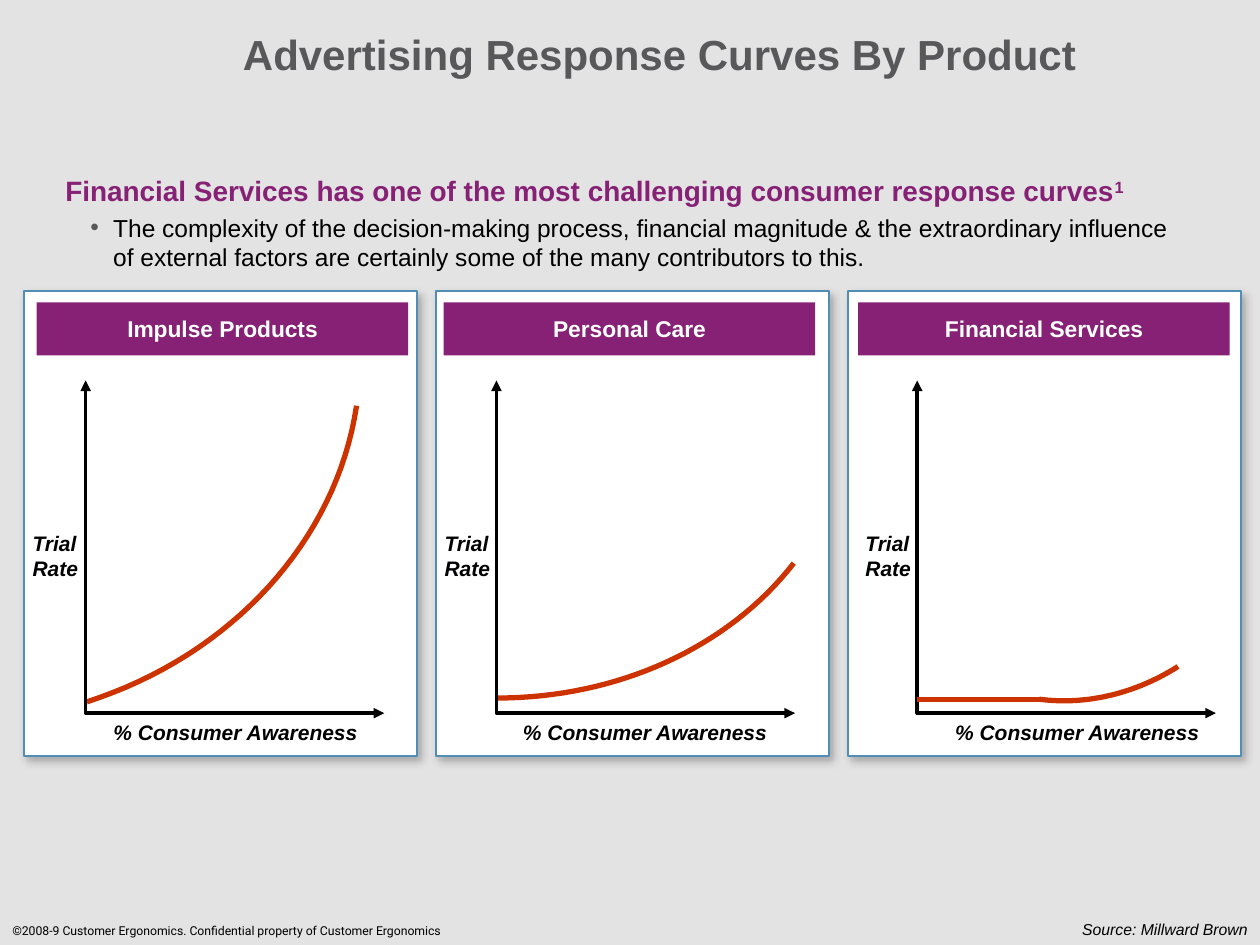
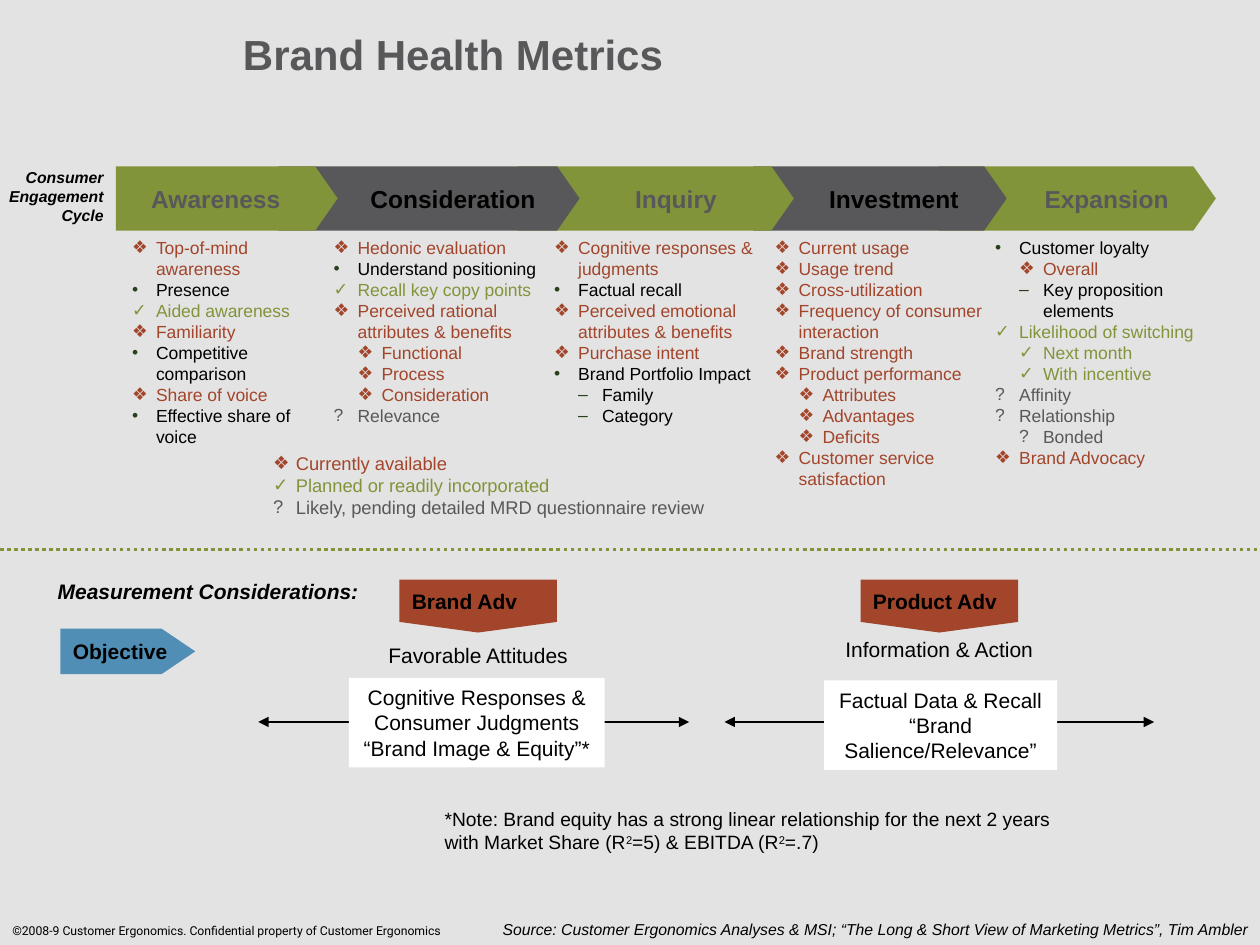
from dataclasses import dataclass
from typing import NamedTuple

from lxml.etree import SubElement
from pptx import Presentation
from pptx.dml.color import RGBColor
from pptx.enum.dml import MSO_LINE
from pptx.enum.shapes import MSO_CONNECTOR, MSO_SHAPE
from pptx.enum.text import MSO_ANCHOR, PP_ALIGN
from pptx.oxml.ns import qn
from pptx.util import Inches, Pt


@dataclass(frozen=True)
class Theme:
    font: str = "Arial"
    footer_font: str = "Roboto"
    background: str = "E3E3E3"
    black: str = "000000"
    white: str = "FFFFFF"
    gray: str = "58585A"
    purple: str = "862175"
    blue: str = "508EB5"
    green: str = "81943A"
    dark_green: str = "2A401A"
    rust: str = "A2452B"
    curve: str = "CC3300"
    title_size: float = 24
    heading_size: float = 16
    body_size: float = 14
    header_size: float = 13
    label_size: float = 12
    note_size: float = 11
    legend_size: float = 10.5
    metric_size: float = 10
    source_size: float = 9
    footer_size: float = 7


THEME = Theme()
AVAILABLE, PLANNED, LIKELY, OTHER, DETAIL = "❖", "✓", "?", "•", "–"
STATUS_COLORS = {  # text colour, bullet colour
    AVAILABLE: (THEME.rust, THEME.rust),
    PLANNED: (THEME.green, THEME.green),
    LIKELY: (THEME.gray, THEME.gray),
    OTHER: (THEME.black, THEME.dark_green),
    DETAIL: (THEME.black, THEME.dark_green),
}


class Metric(NamedTuple):
    status: str
    text: str
    level: int = 0


class Panel(NamedTuple):
    name: str
    header_left: float
    rate_left: float
    axis_left: float
    awareness_left: float
    curve: tuple


class Stage(NamedTuple):
    name: str
    left: float
    width: float
    text_left: float
    fill: str
    color: str
    column_left: float
    column_width: float
    metrics: tuple


PANELS = (
    Panel("Impulse Products", 0.29, 0.16, 0.68, 0.77,
          ((0.69, 5.57), (1.84, 5.2), (2.67, 4.29), (2.83, 3.22))),
    Panel("Personal Care", 3.52, 3.43, 3.94, 4.02,
          ((3.95, 5.54), (4.9, 5.54), (5.78, 5.14), (6.3, 4.47))),
    Panel("Financial Services", 6.81, 6.77, 7.28, 7.45,
          ((8.25, 5.55), (8.63, 5.6), (9.02, 5.5), (9.35, 5.29))),
)

STAGES = (
    Stage("Awareness", 0.92, 1.76, 1.2, THEME.green, THEME.gray, 0.95, 1.72, (
        Metric(AVAILABLE, "Top-of-mind awareness"),
        Metric(OTHER, "Presence"),
        Metric(PLANNED, "Aided awareness"),
        Metric(AVAILABLE, "Familiarity"),
        Metric(OTHER, "Competitive comparison"),
        Metric(AVAILABLE, "Share of voice"),
        Metric(OTHER, "Effective share of voice"))),
    Stage("Consideration", 2.21, 2.39, 2.94, THEME.gray, THEME.black, 2.55, 1.85, (
        Metric(AVAILABLE, "Hedonic evaluation"),
        Metric(OTHER, "Understand positioning"),
        Metric(PLANNED, "Recall key copy points"),
        Metric(AVAILABLE, "Perceived rational attributes & benefits"),
        Metric(AVAILABLE, "Functional", 1),
        Metric(AVAILABLE, "Process", 1),
        Metric(AVAILABLE, "Consideration", 1),
        Metric(LIKELY, "Relevance"))),
    Stage("Inquiry", 4.11, 2.19, 5.04, THEME.green, THEME.gray, 4.3, 1.85, (
        Metric(AVAILABLE, "Cognitive responses & judgments"),
        Metric(OTHER, "Factual recall"),
        Metric(AVAILABLE, "Perceived emotional attributes & benefits"),
        Metric(AVAILABLE, "Purchase intent"),
        Metric(OTHER, "Brand Portfolio Impact"),
        Metric(DETAIL, "Family", 1),
        Metric(DETAIL, "Category", 1))),
    Stage("Investment", 5.98, 2.01, 6.58, THEME.gray, THEME.black, 6.05, 1.85, (
        Metric(AVAILABLE, "Current usage"),
        Metric(AVAILABLE, "Usage trend"),
        Metric(AVAILABLE, "Cross-utilization"),
        Metric(AVAILABLE, "Frequency of consumer interaction"),
        Metric(AVAILABLE, "Brand strength"),
        Metric(AVAILABLE, "Product performance"),
        Metric(AVAILABLE, "Attributes", 1),
        Metric(AVAILABLE, "Advantages", 1),
        Metric(AVAILABLE, "Deficits", 1),
        Metric(AVAILABLE, "Customer service satisfaction"))),
    Stage("Expansion", 7.45, 2.2, 8.29, THEME.green, THEME.gray, 7.8, 1.85, (
        Metric(OTHER, "Customer loyalty"),
        Metric(AVAILABLE, "Overall", 1),
        Metric(DETAIL, "Key proposition elements", 1),
        Metric(PLANNED, "Likelihood of switching"),
        Metric(PLANNED, "Next month", 1),
        Metric(PLANNED, "With incentive", 1),
        Metric(LIKELY, "Affinity"),
        Metric(LIKELY, "Relationship"),
        Metric(LIKELY, "Bonded", 1),
        Metric(AVAILABLE, "Brand Advocacy"))),
)

LEGEND = (
    Metric(AVAILABLE, "Currently available"),
    Metric(PLANNED, "Planned or readily incorporated"),
    Metric(LIKELY, "Likely, pending detailed MRD questionnaire review"),
)


def bezier(start, control_1, control_2, end, steps=32):
    """Points along a cubic curve."""
    for step in range(steps + 1):
        t = step / steps
        weights = ((1 - t) ** 3, 3 * t * (1 - t) ** 2, 3 * t * t * (1 - t), t ** 3)
        yield tuple(sum(weight * point[axis] for weight, point
                        in zip(weights, (start, control_1, control_2, end)))
                    for axis in (0, 1))


class Deck:
    def __init__(self, theme):
        self.theme = theme
        self.presentation = Presentation()
        self.presentation.slide_width = Inches(10)
        self.presentation.slide_height = Inches(7.5)
        self.slide = None

    def start_slide(self, title, source):
        theme = self.theme
        self.slide = self.presentation.slides.add_slide(self.presentation.slide_layouts[6])
        fill = self.slide.background.fill
        fill.solid()
        fill.fore_color.rgb = RGBColor.from_string(theme.background)
        frame = self.text(1.83, 0, 8.17, 0.92, [title], theme.title_size, theme.gray,
                          bold=True, anchor=MSO_ANCHOR.MIDDLE)
        frame.paragraphs[0].line_spacing = 0.8
        self.text(0, 7.28, 3.9, 0.22,
                  ["©2008-9 Customer Ergonomics. Confidential property of Customer Ergonomics"],
                  theme.footer_size, font=theme.footer_font)
        self.text(3.73, 7.25, 6.27, 0.25, [source], theme.source_size, italic=True,
                  align=PP_ALIGN.RIGHT)

    def text(self, left, top, width, height, lines, size, color=None, **style):
        box = self.slide.shapes.add_textbox(*map(Inches, (left, top, width, height)))
        return self.fill_text(box, lines, size, color, **style)

    def fill_text(self, shape, lines, size, color=None, bold=False, italic=False,
                  align=PP_ALIGN.LEFT, anchor=MSO_ANCHOR.TOP, font=None,
                  left_inset=0.1, right_inset=0.1):
        frame = shape.text_frame
        frame.word_wrap = True
        frame.vertical_anchor = anchor
        frame.margin_left, frame.margin_right = Inches(left_inset), Inches(right_inset)
        for index, line in enumerate(lines):
            paragraph = frame.paragraphs[0] if index == 0 else frame.add_paragraph()
            paragraph.alignment = align
            self.fill_paragraph(paragraph, line, size, color, bold, italic, font)
        return frame

    def fill_paragraph(self, paragraph, line, size, color=None, bold=False, italic=False,
                       font=None):
        """Text between carets becomes superscript."""
        if "^" in line:
            for index, part in enumerate(line.split("^")):
                if part:
                    run = paragraph.add_run()
                    run.text = part
                    if index % 2:
                        run._r.get_or_add_rPr().set("baseline", "30000")
        else:
            paragraph.text = line
        paragraph.font.name = font or self.theme.font
        paragraph.font.size = Pt(size)
        paragraph.font.bold, paragraph.font.italic = bold, italic
        paragraph.font.color.rgb = RGBColor.from_string(color or self.theme.black)

    def bullet(self, paragraph, symbol, color, margin, hanging):
        properties = paragraph._p.get_or_add_pPr()
        properties.set("marL", str(Inches(margin)))
        properties.set("indent", str(-Inches(hanging)))
        bullet_color = SubElement(properties, qn("a:buClr"))
        SubElement(bullet_color, qn("a:srgbClr"), val=color)
        SubElement(properties, qn("a:buFont"), typeface=self.theme.font)
        SubElement(properties, qn("a:buChar"), char=symbol)

    def metrics(self, shape, metrics, size, indent=0.19):
        frame = shape.text_frame
        frame.word_wrap = True
        frame.vertical_anchor = MSO_ANCHOR.TOP
        for index, metric in enumerate(metrics):
            paragraph = frame.paragraphs[0] if index == 0 else frame.add_paragraph()
            paragraph.alignment = PP_ALIGN.LEFT
            color, bullet_color = STATUS_COLORS[metric.status]
            self.bullet(paragraph, metric.status, bullet_color,
                        indent * (metric.level + 1), indent)
            self.fill_paragraph(paragraph, metric.text, size, color)

    def shape(self, kind, left, top, width, height, fill, point=None):
        shape = self.slide.shapes.add_shape(kind, *map(Inches, (left, top, width, height)))
        shape.shadow.inherit = False
        shape.fill.solid()
        shape.fill.fore_color.rgb = RGBColor.from_string(fill)
        shape.line.fill.background()
        if point is not None:
            shape.adjustments[0] = point
        return shape

    def card(self, left, top, width, height):
        """White panel with a thin outline and a soft shadow."""
        card = self.shape(MSO_SHAPE.RECTANGLE, left, top, width, height, self.theme.white)
        self.outline(card, self.theme.blue, 1)
        effects = card._element.spPr.find(qn("a:effectLst"))
        shadow = SubElement(effects, qn("a:outerShdw"), blurRad=str(Pt(5)), dist=str(Pt(3)),
                            dir=str(55 * 60000), algn="tl", rotWithShape="0")
        shadow_color = SubElement(shadow, qn("a:srgbClr"), val=self.theme.black)
        SubElement(shadow_color, qn("a:alpha"), val="25000")

    def outline(self, shape, color, width, arrows=False):
        shape.line.color.rgb = RGBColor.from_string(color)
        shape.line.width = Pt(width)
        if arrows:
            for end in ("a:headEnd", "a:tailEnd"):
                SubElement(shape.line._get_or_add_ln(), qn(end), type="triangle")

    def polyline(self, points, color, width, arrows=False):
        start, *rest = [tuple(map(Inches, point)) for point in points]
        builder = self.slide.shapes.build_freeform(*start)
        builder.add_line_segments(rest, close=False)
        shape = builder.convert_to_shape()
        shape.shadow.inherit = False
        shape.fill.background()
        self.outline(shape, color, width, arrows)

    def horizontal(self, left, right, top, color, width, arrows=False):
        line = self.slide.shapes.add_connector(
            MSO_CONNECTOR.STRAIGHT, *map(Inches, (left, top, right, top)))
        self.outline(line, color, width, arrows)
        SubElement(line._element.spPr, qn("a:effectLst"))
        return line


def add_response_curves(deck):
    theme = deck.theme
    deck.start_slide("Advertising Response Curves By Product", "Source: Millward Brown")
    frame = deck.text(0.42, 1.33, 9.17, 0.95, [
        "Financial Services has one of the most challenging consumer response curves^1^"],
        theme.heading_size, theme.purple, bold=True)
    detail = frame.add_paragraph()
    deck.bullet(detail, OTHER, theme.gray, 0.38, 0.18)
    detail.space_before = Pt(3)
    deck.fill_paragraph(
        detail, "The complexity of the decision-making process, financial magnitude & the "
        "extraordinary influence of external factors are certainly some of the many "
        "contributors to this.", theme.body_size)

    axis_top, axis_bottom, axis_length = 3.02, 5.66, 2.37
    label = dict(bold=True, italic=True)
    for index, panel in enumerate(PANELS):
        deck.card(0.19 + 3.27 * index, 2.31, 3.12, 3.69)
        header = deck.shape(MSO_SHAPE.RECTANGLE, panel.header_left, 2.4, 2.95, 0.42,
                            theme.purple)
        deck.fill_text(header, [panel.name], theme.header_size, theme.white, bold=True,
                       align=PP_ALIGN.CENTER, anchor=MSO_ANCHOR.MIDDLE)
        deck.text(panel.rate_left, 4.16, 0.75, 0.5, ["Trial Rate"], theme.label_size, **label)
        deck.text(panel.awareness_left, axis_bottom, 2.2, 0.3, ["% Consumer Awareness"],
                  theme.label_size, align=PP_ALIGN.CENTER, left_inset=0, right_inset=0, **label)
        deck.polyline(bezier(*panel.curve), theme.curve, 3)
        deck.polyline([(panel.axis_left, axis_top), (panel.axis_left, axis_bottom),
                       (panel.axis_left + axis_length, axis_bottom)],
                      theme.black, 2, arrows=True)
    deck.horizontal(7.28, 8.25, 5.55, theme.curve, 3)


def add_brand_health(deck):
    theme = deck.theme
    deck.start_slide("Brand Health Metrics",
                     "Source: Customer Ergonomics Analyses & MSI; “The Long & Short View of "
                     "Marketing Metrics”, Tim Ambler")
    deck.text(0, 1.28, 0.92, 0.56, ["Consumer Engagement Cycle"], theme.source_size,
              bold=True, italic=True, align=PP_ALIGN.RIGHT, left_inset=0)
    for stage in reversed(STAGES):  # each stage overlaps the next one
        arrow = deck.shape(MSO_SHAPE.PENTAGON, stage.left, 1.32, stage.width, 0.51,
                           stage.fill, 0.35)
        deck.fill_text(arrow, [stage.name], theme.body_size, stage.color, bold=True,
                       anchor=MSO_ANCHOR.MIDDLE, left_inset=stage.text_left - stage.left,
                       right_inset=0)
    for stage in STAGES:
        column = deck.slide.shapes.add_textbox(
            *map(Inches, (stage.column_left, 1.83, stage.column_width, 2.3)))
        deck.metrics(column, stage.metrics, theme.metric_size)
    legend = deck.shape(MSO_SHAPE.RECTANGLE, 2.07, 3.54, 3.72, 0.63, theme.background)
    deck.metrics(legend, LEGEND, theme.legend_size, 0.18)

    divider = deck.horizontal(0, 10, 4.36, theme.green, 2)
    divider.line.dash_style = MSO_LINE.ROUND_DOT
    deck.text(0.36, 4.54, 3.17, 0.3, ["Measurement Considerations:"], theme.label_size,
              bold=True, italic=True)
    objective = deck.shape(MSO_SHAPE.PENTAGON, 0.48, 4.99, 1.07, 0.36, theme.blue, 0.74)
    deck.fill_text(objective, ["Objective"], theme.label_size, bold=True,
                   anchor=MSO_ANCHOR.MIDDLE, right_inset=0)

    for name, left, goal, goal_box, arrow, measure, measure_box in (
        ("Brand Adv", 3.17, "Favorable Attitudes", (2.82, 5.05), (2.05, 5.47),
         ["Cognitive Responses &\vConsumer Judgments", "“Brand Image & Equity”*"],
         (2.77, 5.38, 2.03, 0.71)),
        ("Product Adv", 6.83, "Information & Action", (6.48, 5), (5.75, 9.16),
         ["Factual Data & Recall", "“Brand Salience/Relevance”"],
         (6.54, 5.4, 1.85, 0.71)),
    ):
        tag = deck.shape(MSO_SHAPE.FLOWCHART_OFFPAGE_CONNECTOR, left, 4.6, 1.25, 0.42,
                         theme.rust)
        deck.fill_text(tag, [name], theme.label_size, bold=True, anchor=MSO_ANCHOR.MIDDLE)
        deck.text(*goal_box, 1.95, 0.3, [goal], theme.label_size, align=PP_ALIGN.CENTER)
        deck.horizontal(*arrow, 5.73, theme.black, 0.75, arrows=True)
        box = deck.shape(MSO_SHAPE.RECTANGLE, *measure_box, theme.white)
        deck.fill_text(box, measure, theme.label_size, align=PP_ALIGN.CENTER,
                       anchor=MSO_ANCHOR.MIDDLE, left_inset=0.05, right_inset=0.05)
    deck.text(3.43, 6.36, 5.12, 0.47, [
        "*Note: Brand equity has a strong linear relationship for the next 2 years "
        "with Market Share (R^2^=5) & EBITDA (R^2^=.7)"], theme.note_size)


def main():
    deck = Deck(THEME)
    add_response_curves(deck)
    add_brand_health(deck)
    deck.presentation.save("out.pptx")


if __name__ == "__main__":
    main()
